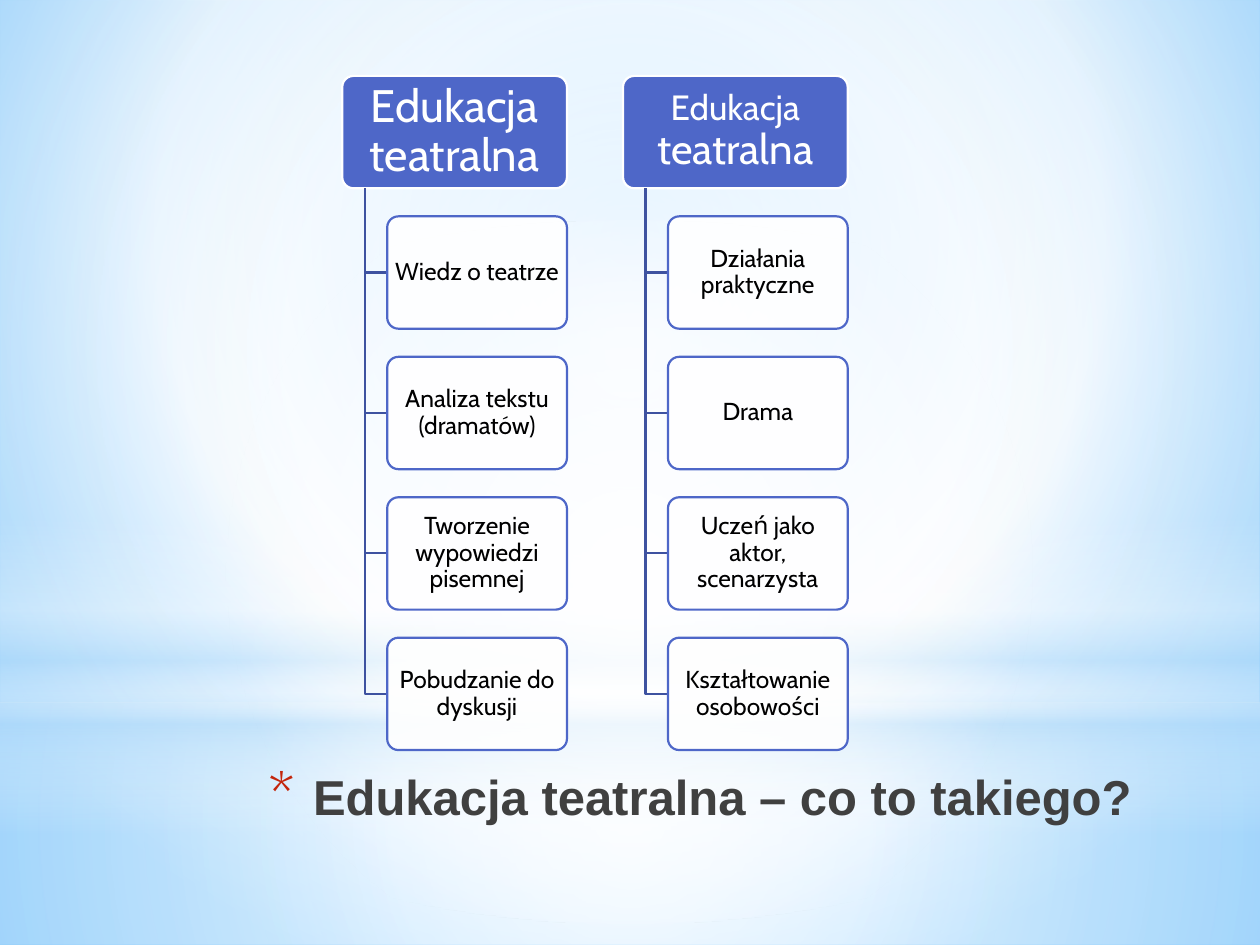
import pptx
import pptx.util
import pptx.dml.color
import pptx.enum.shapes
import pptx.enum.text
import pptx.oxml
import pptx.oxml.ns
from pptx.util import Cm, Pt

RGBColor = pptx.dml.color.RGBColor
SHAPE = pptx.enum.shapes.MSO_SHAPE
ALIGN = pptx.enum.text.PP_ALIGN
ANCHOR = pptx.enum.text.MSO_ANCHOR

WHITE = RGBColor(0xFF, 0xFF, 0xFF)
BLACK = RGBColor(0x00, 0x00, 0x00)
INDIGO = RGBColor(0x4E, 0x67, 0xC8)
BRANCH = RGBColor(0x3E, 0x52, 0xA0)
TITLE_GREY = RGBColor(0x40, 0x40, 0x40)
BULLET_RED = RGBColor(0xC3, 0x26, 0x0C)
MIST = RGBColor(0xB4, 0xDC, 0xFA)
SKY = RGBColor(0x9E, 0xD5, 0xFF)
DEEP_SKY = RGBColor(0x5B, 0xB9, 0xFF)

TREES = [
    ([("Edukacja teatralna", 26)],
     ["Wiedz o teatrze", "Analiza tekstu (dramatów)",
      "Tworzenie wypowiedzi pisemnej", "Pobudzanie do dyskusji"]),
    ([("Edukacja ", 20), ("teatralna", 24)],
     ["Działania praktyczne", "Drama",
      "Uczeń jako aktor, scenarzysta", "Kształtowanie osobowości"]),
]


def drawing_element(tag, content=""):
    return pptx.oxml.parse_xml(
        f'<a:{tag} {pptx.oxml.ns.nsdecls("a")}>{content}</a:{tag}>')


def make_gradient(solid, stops, focus=None):
    """Replace a solid fill by a circular gradient, or a vertical one without focus."""
    marks = "".join(
        f'<a:gs pos="{pos * 1000}"><a:srgbClr val="{color}">'
        f'<a:alpha val="{alpha * 1000}"/></a:srgbClr></a:gs>'
        for pos, color, alpha in stops)
    if focus:
        left, top, right, bottom = (side * 1000 for side in focus)
        direction = (f'<a:path path="circle"><a:fillToRect l="{left}" t="{top}" '
                     f'r="{right}" b="{bottom}"/></a:path>')
    else:
        direction = '<a:lin ang="5400000" scaled="0"/>'
    gradient = drawing_element("gradFill", f"<a:gsLst>{marks}</a:gsLst>{direction}")
    solid.getparent().replace(solid, gradient)


def draw_backdrop(slide, width, height):
    slide.background.fill.solid()
    slide.background.fill.fore_color.rgb = SKY
    make_gradient(slide.element.xpath(".//p:bgPr/a:solidFill")[0],
                  [(0, SKY, 100), (60, WHITE, 100), (100, DEEP_SKY, 100)],
                  (20, 10, 20, 60))
    horizon = Cm(14.17)
    centre = (50, 50, 50, 50)
    glows = [
        (SHAPE.RECTANGLE, horizon, height - horizon, centre,
         [(0, WHITE, 91), (37, WHITE, 76), (100, MIST, 79)]),
        (SHAPE.RECTANGLE, 0, horizon, centre,
         [(0, WHITE, 89), (48, WHITE, 62), (100, MIST, 79)]),
        (SHAPE.RECTANGLE, Cm(10.46), Cm(6.35), None,
         [(0, WHITE, 0), (29, WHITE, 30), (45, MIST, 40),
          (55, WHITE, 26), (65, MIST, 60), (100, WHITE, 0)]),
        (SHAPE.OVAL, Cm(4.45), horizon, centre, [(0, WHITE, 100), (56, WHITE, 0)]),
    ]
    for preset, top, depth, focus, stops in glows:
        glow = slide.shapes.add_shape(preset, 0, top, width, depth)
        glow.shadow.inherit = False
        glow.line.fill.background()
        glow.fill.solid()
        glow.fill.fore_color.rgb = WHITE
        make_gradient(glow.element.xpath("./p:spPr/a:solidFill")[0], stops, focus)


def draw_card(slide, left, top, width, height, runs, fill, outline, color, inset):
    card = slide.shapes.add_shape(SHAPE.ROUNDED_RECTANGLE, left, top, width, height)
    card.adjustments[0] = 0.1
    card.shadow.inherit = False
    card.fill.solid()
    card.fill.fore_color.rgb = fill
    card.line.color.rgb = outline
    card.line.width = Pt(1.25)
    frame = card.text_frame
    frame.word_wrap = True
    frame.vertical_anchor = ANCHOR.MIDDLE
    frame.margin_left = frame.margin_right = inset
    frame.margin_top = frame.margin_bottom = 0
    label = frame.paragraphs[0]
    label.alignment = ALIGN.CENTER
    label.line_spacing = 0.9
    label.font.name = "Cabin"
    label.font.color.rgb = color
    for text, size in runs:
        run = label.add_run()
        run.text = text
        run.font.size = Pt(size)
    return card


def draw_branch(slide, trunk, top, end, middle):
    outline = slide.shapes.build_freeform(trunk, top)
    outline.add_line_segments([(trunk, middle), (end, middle)], close=False)
    branch = outline.convert_to_shape()
    branch.shadow.inherit = False
    branch.fill.background()
    branch.line.color.rgb = BRANCH
    branch.line.width = Pt(1.25)


def draw_tree(slide, left, top, width, height, heading, topics):
    """Heading card with topics hanging below; gaps are a quarter of a card."""
    card_height = round(height / (1 + 1.25 * len(topics)))
    draw_card(slide, left, top, width, card_height, heading,
              INDIGO, WHITE, WHITE, Cm(0.06))
    trunk = left + round(0.1 * width)
    topic_left = left + round(0.2 * width)
    for row, topic in enumerate(topics, start=1):
        topic_top = top + round(1.25 * row * card_height)
        draw_branch(slide, trunk, top + card_height, topic_left,
                    topic_top + card_height // 2)
        card = draw_card(slide, topic_left, topic_top, round(0.8 * width), card_height,
                         [(topic, 14)], WHITE, INDIGO, BLACK, 0)
        tint = card.element.xpath("./p:spPr/a:solidFill/a:srgbClr")[0]
        alpha = drawing_element("alpha")
        alpha.set("val", "90000")
        tint.append(alpha)


def draw_title(slide, left, top, width, height):
    frame = slide.shapes.add_textbox(left, top, width, height).text_frame
    frame.word_wrap = True
    title = frame.paragraphs[0]
    title.text = "Edukacja teatralna – co to takiego?"
    title.alignment = ALIGN.RIGHT
    properties = title._p.get_or_add_pPr()
    properties.set("marL", str(Cm(0.89)))
    properties.set("indent", str(-Cm(0.89)))
    properties.append(drawing_element("buClr", f'<a:srgbClr val="{BULLET_RED}"/>'))
    for tag, key, value in [("buSzPct", "val", "128000"),
                            ("buFont", "typeface", "Cabin"),
                            ("buChar", "char", "*")]:
        bullet = drawing_element(tag)
        bullet.set(key, value)
        properties.append(bullet)
    title.font.name = "Arial"
    title.font.size = Pt(28)
    title.font.bold = True
    title.font.color.rgb = TITLE_GREY


def main():
    deck = pptx.Presentation()
    deck.slide_width, deck.slide_height = Cm(25.4), Cm(19.05)
    slide = deck.slides.add_slide(deck.slide_layouts[6])
    draw_backdrop(slide, deck.slide_width, deck.slide_height)
    draw_title(slide, Cm(4.98), Cm(15.32), Cm(18.08), Cm(1.8))
    for column, (heading, topics) in enumerate(TREES):
        draw_tree(slide, Cm(6.9 + 5.66 * column), Cm(1.53), Cm(4.53), Cm(13.59),
                  heading, topics)
    deck.save("out.pptx")


if __name__ == "__main__":
    main()
